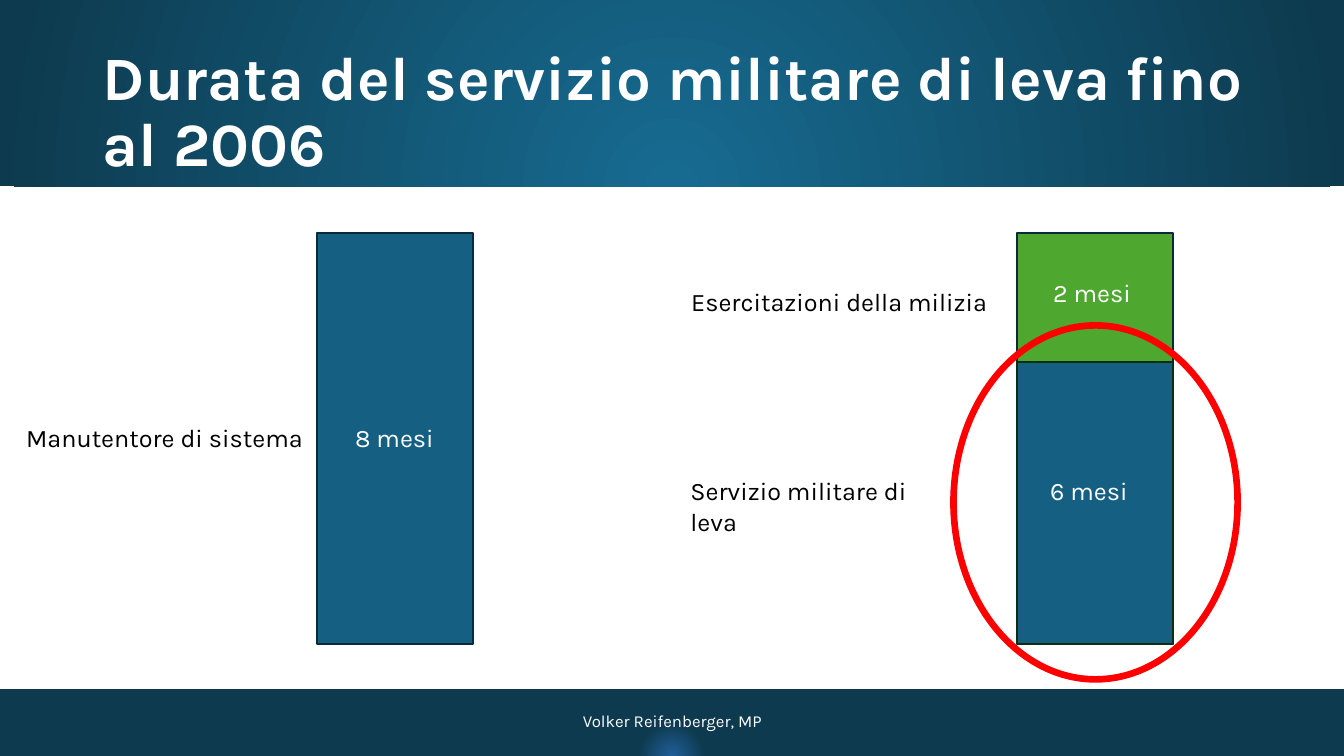
from dataclasses import dataclass
from typing import Optional

import pptx
import pptx.dml.color
import pptx.enum.shapes
import pptx.enum.text
import pptx.oxml
import pptx.oxml.ns
import pptx.util

Cm = pptx.util.Cm
Pt = pptx.util.Pt
RGBColor = pptx.dml.color.RGBColor
Preset = pptx.enum.shapes.MSO_SHAPE
Align = pptx.enum.text.PP_ALIGN
Anchor = pptx.enum.text.MSO_ANCHOR
AutoSize = pptx.enum.text.MSO_AUTO_SIZE

FONT = "Karla"
WHITE = RGBColor(0xFF, 0xFF, 0xFF)
BLACK = RGBColor(0x00, 0x00, 0x00)
RED = RGBColor(0xFF, 0x00, 0x00)
BLUE = RGBColor(0x15, 0x60, 0x82)
GREEN = RGBColor(0x4E, 0xA7, 0x2E)
BLUE_EDGE = RGBColor(0x09, 0x2A, 0x39)
GREEN_EDGE = RGBColor(0x0B, 0x2F, 0x10)
NAVY = RGBColor(0x0D, 0x3A, 0x4E)
HEADER_GLOW = RGBColor(0x17, 0x6B, 0x91)
FOOTER_GLOW = RGBColor(0x21, 0x5F, 0x9A)

SLIDE_WIDTH, SLIDE_HEIGHT = 33.87, 19.05
BAR_TOP, BAR_WIDTH, BAR_BOTTOM = 5.87, 3.94, 16.23
SYSTEM_LEFT, MILITIA_LEFT = 7.98, 25.63
LABEL_HEIGHT, MONTHS_WIDTH = 1.02, 3.12


@dataclass(frozen=True)
class Band:
    top: float
    height: float
    glow: RGBColor
    glow_stop: int
    edge_stop: int


@dataclass(frozen=True)
class Bar:
    left: float
    top: float
    fill: RGBColor
    edge: RGBColor


@dataclass(frozen=True)
class Label:
    text: str
    left: float
    top: float
    width: float
    color: RGBColor = BLACK
    align: Align = Align.LEFT


def months(text: str, left: float, top: float) -> Label:
    return Label(text, left, top, MONTHS_WIDTH, WHITE, Align.CENTER)


BANDS = [
    Band(SLIDE_HEIGHT - 1.68, 1.68, FOOTER_GLOW, 0, 5),
    Band(0, 4.7, HEADER_GLOW, 1, 100),
]
BARS = [
    Bar(SYSTEM_LEFT, BAR_TOP, BLUE, BLUE_EDGE),
    Bar(MILITIA_LEFT, BAR_TOP, GREEN, BLUE_EDGE),
    Bar(MILITIA_LEFT, 9.12, BLUE, GREEN_EDGE),
]
LABELS = [
    months("8 mesi", 8.38, 10.52),
    months("6 mesi", 25.88, 11.86),
    months("2 mesi", 25.96, 6.86),
    Label("Servizio militare di leva", 17.15, 11.86, 6.76),
    Label("Esercitazioni della milizia", 17.17, 7.09, 8),
    Label("Manutentore di sistema", 0.41, 10.52, 8),
]


def write(frame, text: str, *, size: float = 18, color: RGBColor = BLACK,
          bold: bool = False, align: Align = Align.LEFT,
          anchor: Anchor = Anchor.TOP, spacing: Optional[float] = None) -> None:
    frame.word_wrap = True
    frame.auto_size = AutoSize.NONE
    frame.vertical_anchor = anchor
    paragraph = frame.paragraphs[0]
    paragraph.alignment = align
    paragraph.line_spacing = spacing
    run = paragraph.add_run()
    run.text = text
    run.font.name = FONT
    run.font.size = Pt(size)
    run.font.bold = bold
    run.font.color.rgb = color


def add_plain_shape(slide, preset: Preset, left: float, top: float,
                    width: float, height: float):
    """Add a shape with no shadow, fill or outline."""
    shape = slide.shapes.add_shape(preset, Cm(left), Cm(top), Cm(width), Cm(height))
    shape.shadow.inherit = False
    shape.fill.background()
    shape.line.fill.background()
    return shape


def outline(shape, color: RGBColor, width: float) -> None:
    shape.line.color.rgb = color
    shape.line.width = Pt(width)


def add_band(slide, band: Band):
    """Add a full-width band with a circular glow."""
    shape = add_plain_shape(slide, Preset.RECTANGLE, 0, band.top, SLIDE_WIDTH, band.height)
    stops = "".join(
        f'<a:gs pos="{stop * 1000}"><a:srgbClr val="{color}"/></a:gs>'
        for stop, color in ((band.glow_stop, band.glow), (band.edge_stop, NAVY)))
    gradient = pptx.oxml.parse_xml(
        f'<a:gradFill {pptx.oxml.ns.nsdecls("a")} rotWithShape="1">'
        f'<a:gsLst>{stops}</a:gsLst><a:path path="circle">'
        '<a:fillToRect l="50000" t="130000" r="50000" b="-30000"/>'
        '</a:path></a:gradFill>')
    properties = shape.element.spPr
    properties.replace(properties.find(pptx.oxml.ns.qn("a:noFill")), gradient)
    return shape


def add_bar(slide, bar: Bar) -> None:
    shape = add_plain_shape(slide, Preset.RECTANGLE, bar.left, bar.top,
                            BAR_WIDTH, BAR_BOTTOM - bar.top)
    shape.fill.solid()
    shape.fill.fore_color.rgb = bar.fill
    outline(shape, bar.edge, 1.5)


def add_label(slide, label: Label) -> None:
    box = slide.shapes.add_textbox(Cm(label.left), Cm(label.top),
                                   Cm(label.width), Cm(LABEL_HEIGHT))
    write(box.text_frame, label.text, color=label.color, align=label.align)


def main() -> None:
    presentation = pptx.Presentation()
    presentation.slide_width = Cm(SLIDE_WIDTH)
    presentation.slide_height = Cm(SLIDE_HEIGHT)
    slide = presentation.slides.add_slide(presentation.slide_layouts[5])

    footer_band, header_band = [add_band(slide, band) for band in BANDS]

    title = slide.shapes.title
    header_band.element.addnext(title.element)
    title.left, title.top, title.width, title.height = (
        Cm(2.34), Cm(1.02), Cm(30.99), Cm(3.68))
    write(title.text_frame, "Durata del servizio militare di leva fino al 2006",
          size=44, color=WHITE, bold=True, anchor=Anchor.MIDDLE, spacing=0.9)

    author = slide.shapes.add_textbox(Cm(11.23), Cm(17.65), Cm(11.43), Cm(LABEL_HEIGHT))
    write(author.text_frame, "Volker Reifenberger, MP", size=12, color=WHITE,
          align=Align.CENTER, anchor=Anchor.MIDDLE)

    for bar in BARS:
        add_bar(slide, bar)
    for label in LABELS:
        add_label(slide, label)

    highlight = add_plain_shape(slide, Preset.OVAL, 24.03, 8.2, 7.16, 8.92)
    outline(highlight, RED, 4.75)

    presentation.save("out.pptx")


if __name__ == "__main__":
    main()
